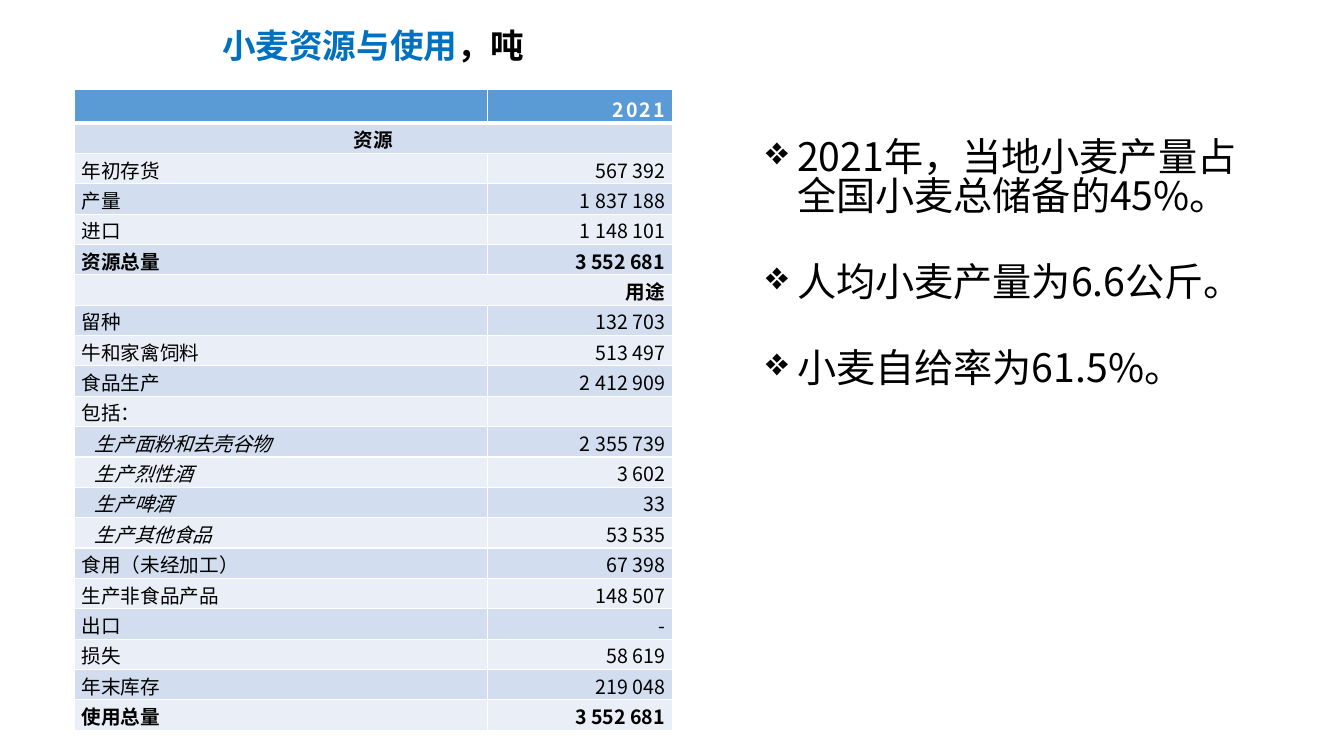
import pptx
import pptx.dml.color
import pptx.enum.text
import pptx.oxml.ns
import pptx.util
from lxml import etree
from pptx.util import Cm, Pt

FONT = "Noto Sans CJK SC"
ALIGN = pptx.enum.text.PP_ALIGN
ANCHOR = pptx.enum.text.MSO_ANCHOR
HEADER_FILL, BAND_FILLS = "5B9BD5", ("D2DEEF", "EAEFF7")

# Label, value, style: "heading" spans both columns, "part" is indented.
ROWS = [
    ("", "2021", "header"),
    ("资源", ALIGN.CENTER, "heading"),
    ("年初存货", "567 392", "item"),
    ("产量", "1 837 188", "item"),
    ("进口", "1 148 101", "item"),
    ("资源总量", "3 552 681", "total"),
    ("用途", ALIGN.RIGHT, "heading"),
    ("留种", "132 703", "item"),
    ("牛和家禽饲料", "513 497", "item"),
    ("食品生产", "2 412 909", "item"),
    ("包括：", "", "item"),
    ("生产面粉和去壳谷物", "2 355 739", "part"),
    ("生产烈性酒", "3 602", "part"),
    ("生产啤酒", "33", "part"),
    ("生产其他食品", "53 535", "part"),
    ("食用（未经加工）", "67 398", "item"),
    ("生产非食品产品", "148 507", "item"),
    ("出口", "-", "item"),
    ("损失", "58 619", "item"),
    ("年末库存", "219 048", "item"),
    ("使用总量", "3 552 681", "total"),
]
FINDINGS = [
    "2021年，当地小麦产量占全国小麦总储备的45%。",
    "人均小麦产量为6.6公斤。",
    "小麦自给率为61.5%。",
]


def color(code):
    return pptx.dml.color.RGBColor.from_string(code)


def add_element(parent, tag, **attributes):
    element = etree.SubElement(parent, pptx.oxml.ns.qn(tag))
    for name, value in attributes.items():
        element.set(name, str(value))
    return element


def format_span(span, size, code="000000", bold=False, italic=False):
    font = span.font
    font.size, font.bold, font.italic = Pt(size), bold, italic
    font.color.rgb = color(code)
    font.name = FONT
    add_element(font._element, "a:ea", typeface=FONT)


def add_text_frame(page, box):
    frame = page.shapes.add_textbox(*box).text_frame
    frame.word_wrap = True
    return frame


def add_title(page, box):
    frame = add_text_frame(page, box)
    frame.vertical_anchor = ANCHOR.BOTTOM
    para = frame.paragraphs[0]
    para.alignment, para.space_after = ALIGN.CENTER, Pt(6)
    for text, code in (("小麦资源与使用", "0070C0"), ("，吨", "000000")):
        span = para.add_run()
        span.text = text
        format_span(span, 24, code, bold=True)


def style_cell(cell, fill, bottom_width):
    """Draw white borders, then the fill, as the schema orders them."""
    properties = cell._tc.get_or_add_tcPr()
    for side in "LRTB":
        width = bottom_width if side == "B" else 1
        line = add_element(properties, "a:ln" + side, w=Pt(width))
        solid = add_element(line, "a:solidFill")
        add_element(solid, "a:srgbClr", val="FFFFFF")
    cell.fill.solid()
    cell.fill.fore_color.rgb = color(fill)


def fill_cell(cell, text, style, align, is_label):
    is_part = style == "part" and is_label
    cell.margin_left = Cm(0.51 if is_part else 0.18)
    cell.margin_right = Cm(0.18)
    cell.margin_top = cell.margin_bottom = 0
    cell.vertical_anchor = ANCHOR.BOTTOM
    para = cell.text_frame.paragraphs[0]
    para.text = text
    para.alignment = align
    is_header = style == "header"
    for span in para.runs or [para.add_run()]:
        format_span(span, 14, "FFFFFF" if is_header else "000000",
                    style in ("header", "heading", "total"), is_part)
        if is_header:
            span.font._element.set("spc", "150")


def add_balance_table(page, box):
    left, top, width, height = box
    table = page.shapes.add_table(len(ROWS), 2, *box).table
    table.columns[0].width = Cm(10.41)
    table.columns[1].width = width - Cm(10.41)
    header_height = Cm(0.84)
    row_height = (height - header_height) // (len(ROWS) - 1)
    for index, (label, value, style) in enumerate(ROWS):
        is_header = style == "header"
        table.rows[index].height = header_height if is_header else row_height
        fill = HEADER_FILL if is_header else BAND_FILLS[(index - 1) % 2]
        first, second = table.cell(index, 0), table.cell(index, 1)
        for cell in (first, second):
            style_cell(cell, fill, 3 if is_header else 1)
        if style == "heading":
            first.merge(second)
            fill_cell(first, label, style, value, True)
        else:
            fill_cell(first, label, style, ALIGN.LEFT, True)
            fill_cell(second, value, style, ALIGN.RIGHT, False)


def add_findings(page, box):
    frame = add_text_frame(page, box)
    frame.text = "\n".join(FINDINGS)
    for index, para in enumerate(frame.paragraphs):
        para.line_spacing = 0.83
        para.space_before = Pt(33.6 if index else 0)
        properties = para._p.get_or_add_pPr()
        properties.set("marL", str(Cm(0.79)))
        properties.set("indent", str(-Cm(0.79)))
        add_element(properties, "a:buChar", char="❖")
        for span in para.runs:
            format_span(span, 28)


def main():
    deck = pptx.Presentation()
    deck.slide_width, deck.slide_height = Cm(33.87), Cm(19.05)
    page = deck.slides.add_slide(deck.slide_layouts[6])
    add_title(page, (Cm(0.48), Cm(0.08), Cm(17.86), Cm(1.7)))
    add_balance_table(page, (Cm(1.88), Cm(2.26), Cm(15.06), Cm(16.15)))
    add_findings(page, (Cm(19.05), Cm(3.4), Cm(13.23), Cm(12.22)))
    deck.save("out.pptx")


if __name__ == "__main__":
    main()
